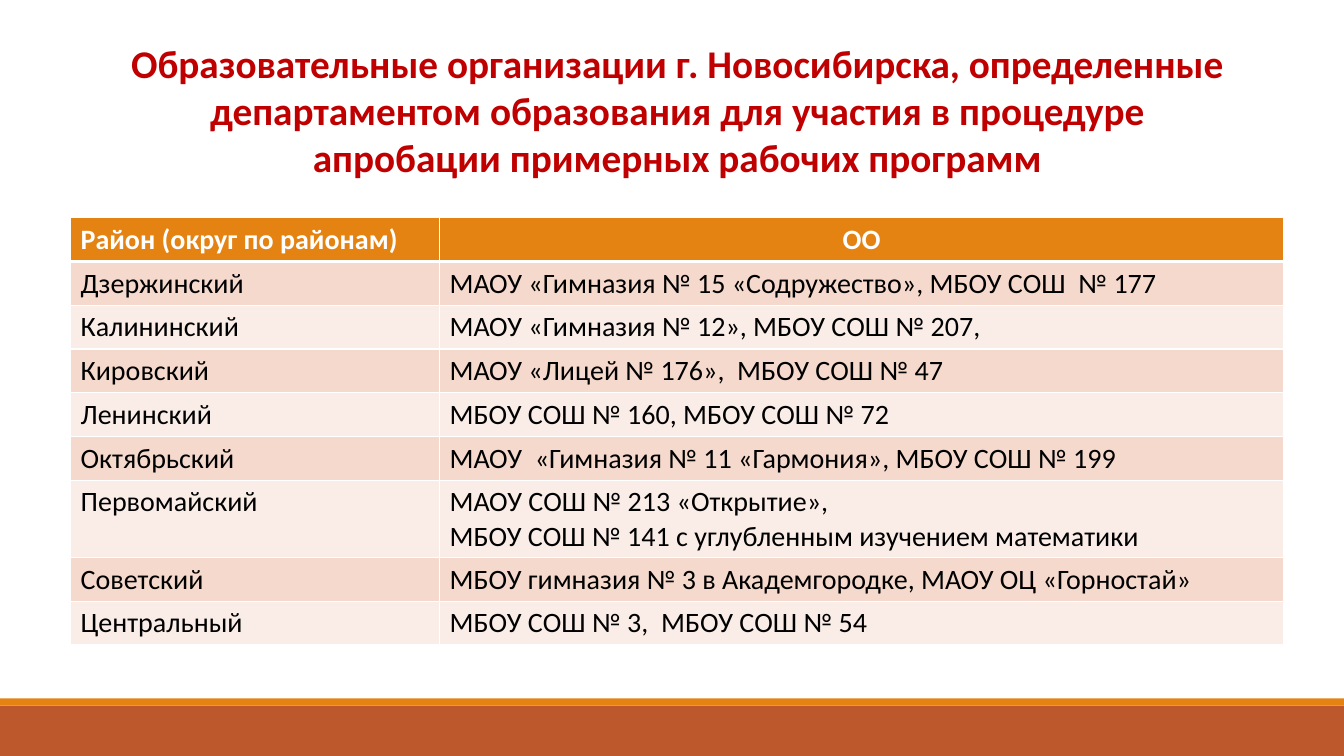
from dataclasses import dataclass

from lxml.etree import SubElement
from pptx import Presentation
from pptx.dml.color import RGBColor
from pptx.enum.shapes import MSO_SHAPE
from pptx.enum.text import PP_ALIGN
from pptx.oxml.ns import qn
from pptx.util import Inches, Pt


@dataclass(frozen=True)
class Theme:
    font: str = "Calibri"
    title: str = "C00000"
    head: str = "E48312"
    foot: str = "BD582C"
    white: str = "FFFFFF"
    black: str = "000000"
    bands: tuple = ("F5D9CC", "FAEDE7")
    large: int = 28
    body: int = 20


TITLE = ("Образовательные организации г. Новосибирска, определенные "
         "департаментом образования для участия в процедуре "
         "апробации примерных рабочих программ")

SCHOOLS = [
    ("Район (округ по районам)", "ОО"),
    ("Дзержинский", "МАОУ «Гимназия № 15 «Содружество», МБОУ СОШ  № 177"),
    ("Калининский", "МАОУ «Гимназия № 12», МБОУ СОШ № 207,"),
    ("Кировский", "МАОУ «Лицей № 176»,  МБОУ СОШ № 47"),
    ("Ленинский", "МБОУ СОШ № 160, МБОУ СОШ № 72"),
    ("Октябрьский", "МАОУ  «Гимназия № 11 «Гармония», МБОУ СОШ № 199"),
    ("Первомайский", "МАОУ СОШ № 213 «Открытие»,\n"
                     "МБОУ СОШ № 141 с углубленным изучением математики"),
    ("Советский", "МБОУ гимназия № 3 в Академгородке, МАОУ ОЦ «Горностай»"),
    ("Центральный", "МБОУ СОШ № 3,  МБОУ СОШ № 54"),
]


class Deck:
    def __init__(self, theme):
        self.theme = theme
        self.deck = Presentation()
        self.deck.slide_width = Inches(13.33)
        self.deck.slide_height = Inches(7.5)
        self.slide = self.deck.slides.add_slide(self.deck.slide_layouts[6])

    def style(self, frame, size, color, bold=False, align=PP_ALIGN.LEFT):
        look = {"name": self.theme.font, "size": Pt(size), "bold": bold}
        for para in frame.paragraphs:
            para.alignment = align
            for run in para.runs:
                for key, value in look.items():
                    setattr(run.font, key, value)
                run.font.color.rgb = RGBColor.from_string(color)

    def bar(self, top, height, color):
        """Draw a plain band across the whole slide."""
        bar = self.slide.shapes.add_shape(
            MSO_SHAPE.RECTANGLE, 0, Inches(top), self.deck.slide_width, Inches(height))
        bar.shadow.inherit = False
        bar.fill.solid()
        bar.fill.fore_color.rgb = RGBColor.from_string(color)
        bar.line.fill.background()

    def title(self, text, *box):
        frame = self.slide.shapes.add_textbox(*map(Inches, box)).text_frame
        frame.word_wrap = True
        frame.text = text
        self.style(frame, self.theme.large, self.theme.title, True, PP_ALIGN.CENTER)

    def edge(self, cell, side, width):
        """Add one white border; borders must come before the cell's fill."""
        line = SubElement(cell._tc.get_or_add_tcPr(), qn(f"a:{side}"), w=str(Pt(width)))
        fill = SubElement(line, qn("a:solidFill"))
        SubElement(fill, qn("a:srgbClr"), val=self.theme.white)

    def cell(self, cell, text, row, col):
        theme, head = self.theme, row == 0
        cell.text = text
        color = theme.white if head else theme.black
        align = PP_ALIGN.CENTER if head and col else PP_ALIGN.LEFT
        self.style(cell.text_frame, theme.body, color, head, align)
        edges = {"lnL": 1, "lnR": 1, "lnT": 3 if row == 1 else 1, "lnB": 3 if head else 1}
        for side, width in edges.items():
            self.edge(cell, side, width)
        cell.fill.solid()
        fill = theme.head if head else theme.bands[(row - 1) % 2]
        cell.fill.fore_color.rgb = RGBColor.from_string(fill)

    def table(self, data, left, top, widths, height):
        table = self.slide.shapes.add_table(
            len(data), len(widths), Inches(left), Inches(top),
            Inches(sum(widths)), Inches(height * len(data))).table
        for column, width in zip(table.columns, widths):
            column.width = Inches(width)
        for row, texts in enumerate(data):
            for col, text in enumerate(texts):
                self.cell(table.cell(row, col), text, row, col)


def main():
    theme = Theme()
    deck = Deck(theme)
    deck.bar(7, 0.5, theme.foot)
    deck.bar(6.93, 0.07, theme.head)
    deck.title(TITLE, 1.19, 0.34, 11.05, 1.51)
    deck.table(SCHOOLS, 0.7, 2.16, (3.66, 8.37), 0.41)
    deck.deck.save("out.pptx")


if __name__ == "__main__":
    main()
